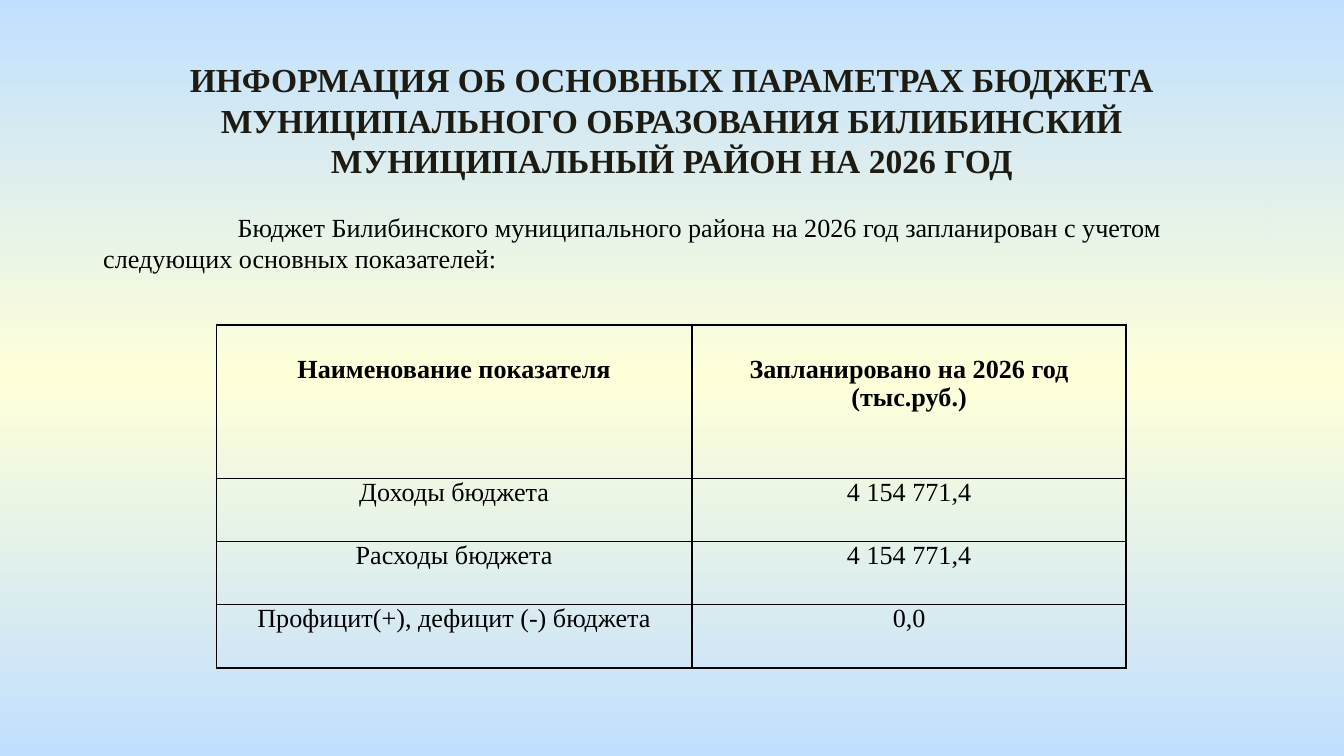
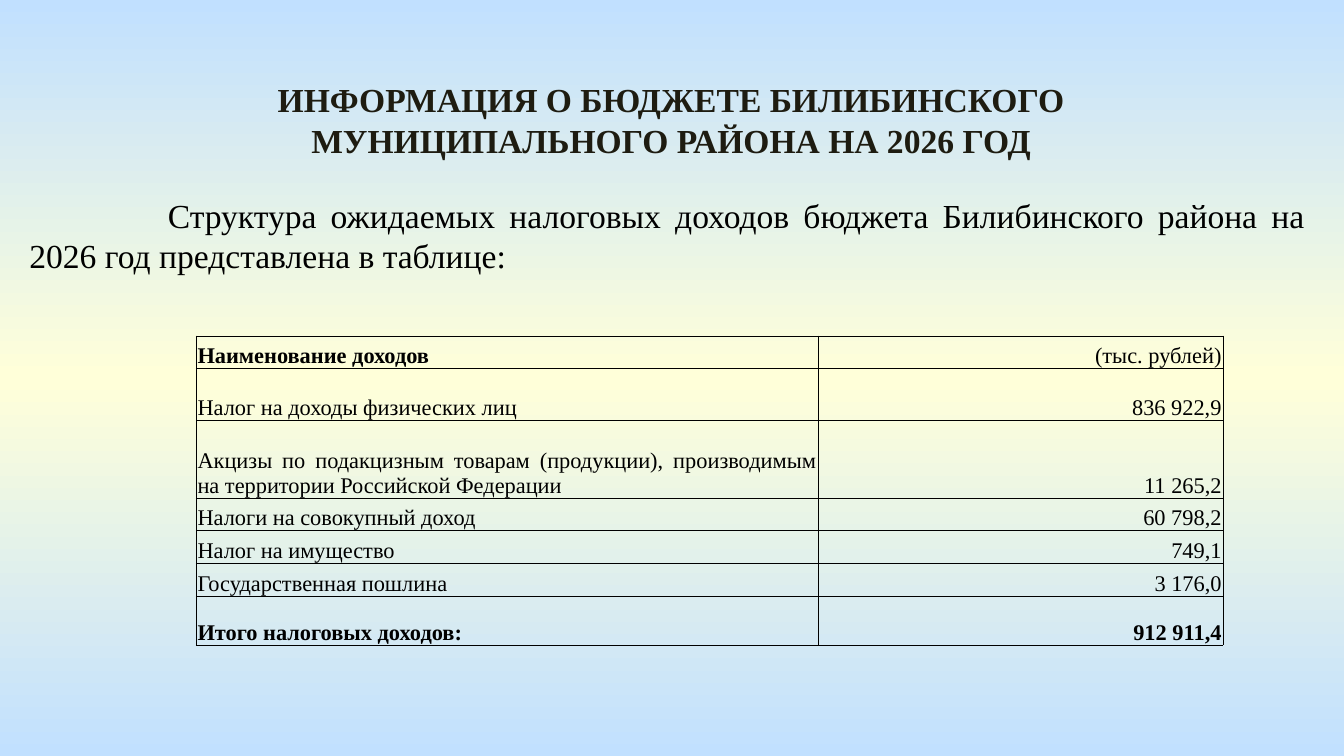
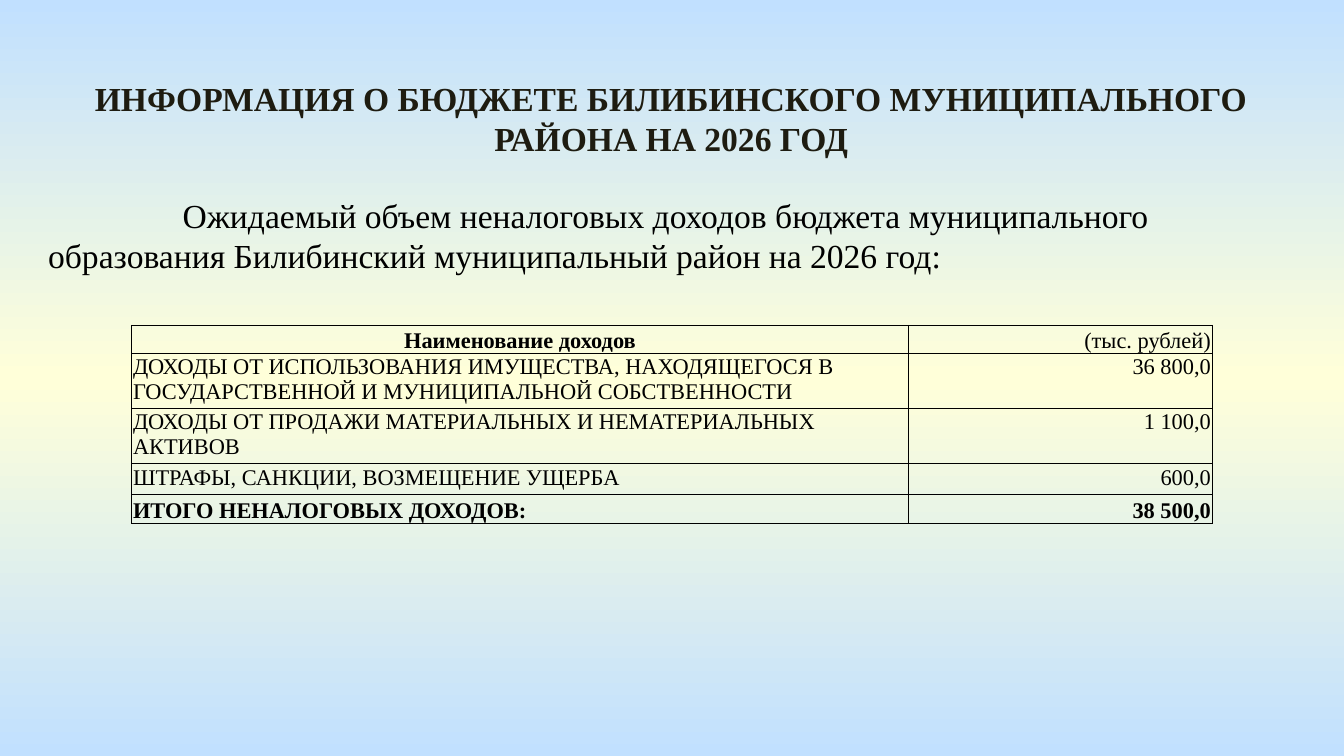
import copy

import pptx
import pptx.dml.color
import pptx.enum.text
import pptx.oxml
import pptx.oxml.ns
import pptx.util
from pptx.util import Inches

FONT = "Times New Roman"
BLACK = "000000"
TITLE_COLOR = "1E1C11"
SKY = "C1E0FF"
CREAM = "FFFFD9"
TITLE_ONLY = 5
INTRO_SIZE = 18
ALIGN = pptx.enum.text.PP_ALIGN
ANCHOR = pptx.enum.text.MSO_ANCHOR
TOTAL_TITLE = "ИНФОРМАЦИЯ О БЮДЖЕТЕ БИЛИБИНСКОГО МУНИЦИПАЛЬНОГО РАЙОНА НА 2026 ГОД"


def rgb(value):
    return pptx.dml.color.RGBColor.from_string(value)


def set_background(master):
    fill = master.background.fill
    fill.gradient()
    fill.gradient_angle = 90
    for stop in fill.gradient_stops:
        stop.color.rgb = rgb(SKY)
    stops = master.element.find(".//" + pptx.oxml.ns.qn("a:gsLst"))
    stops.insert(1, copy.deepcopy(stops[0]))
    for stop, position in zip(fill.gradient_stops, (0, 0.5, 1)):
        stop.position = position
    fill.gradient_stops[1].color.rgb = rgb(CREAM)


def add_run(p, text, size, color=BLACK, bold=False):
    r = p.add_run()
    r.text = text
    r.font.name = FONT
    r.font.size = pptx.util.Pt(size)
    r.font.bold = bold
    r.font.color.rgb = rgb(color)


def place(sp, left, top, width, height):
    sp.left, sp.top = Inches(left), Inches(top)
    sp.width, sp.height = Inches(width), Inches(height)


def add_titled_slide(prs, title, box):
    s = prs.slides.add_slide(prs.slide_layouts[TITLE_ONLY])
    sp = s.shapes.title
    place(sp, *box)
    tf = sp.text_frame
    tf.word_wrap = True
    tf.auto_size = pptx.enum.text.MSO_AUTO_SIZE.NONE
    tf.vertical_anchor = ANCHOR.TOP
    p = tf.paragraphs[0]
    p.alignment = ALIGN.CENTER
    add_run(p, title, 18, TITLE_COLOR, True)
    return s


def add_intro(s, text, box, size=INTRO_SIZE, align=ALIGN.LEFT, indent=1.0):
    sp = s.shapes.add_textbox(*map(Inches, box))
    tf = sp.text_frame
    tf.word_wrap = True
    p = tf.paragraphs[0]
    p.alignment = align
    p._p.get_or_add_pPr().set("indent", str(Inches(indent)))
    add_run(p, text, size)
    return sp


def use_slide_background(sp):
    sp_pr = sp.element.spPr
    sp_pr.remove(sp_pr.find(pptx.oxml.ns.qn("a:noFill")))
    sp.element.set("useBgFill", "1")


def set_borders(cell, width):
    tc_pr = cell._tc.get_or_add_tcPr()
    for side in ("lnL", "lnR", "lnT", "lnB"):
        tc_pr.append(pptx.oxml.parse_xml(
            f'<a:{side} {pptx.oxml.ns.nsdecls("a")} w="{pptx.util.Pt(width)}">'
            f'<a:solidFill><a:srgbClr val="{BLACK}"/></a:solidFill></a:{side}>'))


def add_cell_text(cell, text, size, bold, align, anchor, insets):
    side, top = insets
    cell.margin_left = cell.margin_right = Inches(side)
    cell.margin_top, cell.margin_bottom = Inches(top), 0
    cell.vertical_anchor = anchor
    p = cell.text_frame.paragraphs[0]
    p.alignment = align
    add_run(p, text, size, bold=bold)


def add_grid(s, left, top, widths, heights, rows, size, line, insets,
             aligns, anchors, bold_cells, header_align):
    frame = s.shapes.add_table(
        len(rows), len(widths), Inches(left), Inches(top),
        Inches(sum(widths)), Inches(sum(heights)))
    table = frame.table
    table.first_row = table.horz_banding = False
    for column, width in zip(table.columns, widths):
        column.width = Inches(width)
    for i, (row, height) in enumerate(zip(rows, heights)):
        table.rows[i].height = Inches(height)
        for j, text in enumerate(row):
            cell = table.cell(i, j)
            set_borders(cell, line)
            cell.fill.background()
            align = header_align if (i, j) == (0, 0) else aligns[j]
            add_cell_text(cell, text, size, (i, j) in bold_cells, align,
                          anchors[i], insets)
    return table


def add_parameters_slide(prs):
    s = add_titled_slide(
        prs,
        "ИНФОРМАЦИЯ ОБ ОСНОВНЫХ ПАРАМЕТРАХ БЮДЖЕТА МУНИЦИПАЛЬНОГО "
        "ОБРАЗОВАНИЯ БИЛИБИНСКИЙ МУНИЦИПАЛЬНЫЙ РАЙОН НА 2026 ГОД",
        (0.35, 0.39, 9.3, 1.01))
    sp = add_intro(
        s,
        "Бюджет Билибинского муниципального района на 2026 год запланирован "
        "с учетом следующих основных показателей:",
        (0.67, 1.46, 8.74, 0.64), size=14)
    sp.text_frame.margin_top = Inches(0.11)
    use_slide_background(sp)
    rows = [
        ("Наименование показателя", "Запланировано на 2026 год (тыс.руб.)"),
        ("Доходы бюджета", "4 154 771,4"),
        ("Расходы бюджета", "4 154 771,4"),
        ("Профицит(+), дефицит (-) бюджета", "0,0"),
    ]
    table = add_grid(
        s, 1.61, 2.42, (3.54, 3.23), [1.14] + [0.47] * 3, rows,
        size=14, line=1, insets=(0.07, 0), aligns=(ALIGN.CENTER, ALIGN.CENTER),
        anchors=[ANCHOR.TOP] * 4, bold_cells={(0, 0), (0, 1)},
        header_align=ALIGN.CENTER)
    for cell in table.rows[0].cells:
        cell.margin_top = Inches(0.22)


def add_tax_slide(prs):
    s = add_titled_slide(prs, TOTAL_TITLE, (1.13, 0.54, 7.73, 0.71))
    add_intro(
        s,
        "Структура ожидаемых налоговых доходов бюджета Билибинского района "
        "на 2026 год представлена в таблице:",
        (0.12, 1.4, 9.69, 0.71), align=ALIGN.JUSTIFY, indent=1.03)
    rows = [
        ("Наименование доходов", "(тыс. рублей)"),
        ("Налог на доходы физических лиц", "836 922,9"),
        ("Акцизы по подакцизным товарам (продукции), производимым на "
         "территории Российской Федерации", "11 265,2"),
        ("Налоги на совокупный доход", "60 798,2"),
        ("Налог на имущество", "749,1"),
        ("Государственная пошлина", "3 176,0"),
        ("Итого налоговых доходов:", "912 911,4"),
    ]
    add_grid(
        s, 1.46, 2.5, (4.63, 3.01),
        (0.24, 0.39, 0.58, 0.24, 0.24, 0.25, 0.36), rows,
        size=12, line=0.5, insets=(0.01, 0.01),
        aligns=(ALIGN.JUSTIFY, ALIGN.RIGHT),
        anchors=[ANCHOR.BOTTOM] * 7, bold_cells={(0, 0), (6, 0), (6, 1)},
        header_align=ALIGN.JUSTIFY)


def add_non_tax_slide(prs):
    s = add_titled_slide(prs, TOTAL_TITLE, (0.39, 0.53, 9.21, 0.71))
    add_intro(
        s,
        "Ожидаемый объем неналоговых доходов бюджета муниципального "
        "образования Билибинский муниципальный район на 2026 год:",
        (0.26, 1.4, 9.49, 0.71))
    rows = [
        ("Наименование доходов", "(тыс. рублей)"),
        ("ДОХОДЫ ОТ ИСПОЛЬЗОВАНИЯ ИМУЩЕСТВА, НАХОДЯЩЕГОСЯ В "
         "ГОСУДАРСТВЕННОЙ И МУНИЦИПАЛЬНОЙ СОБСТВЕННОСТИ", "36 800,0"),
        ("ДОХОДЫ ОТ ПРОДАЖИ МАТЕРИАЛЬНЫХ И НЕМАТЕРИАЛЬНЫХ АКТИВОВ",
         "1 100,0"),
        ("ШТРАФЫ, САНКЦИИ, ВОЗМЕЩЕНИЕ УЩЕРБА", "600,0"),
        ("ИТОГО НЕНАЛОГОВЫХ ДОХОДОВ:", "38 500,0"),
    ]
    add_grid(
        s, 0.98, 2.42, (5.78, 2.26), (0.2, 0.41, 0.41, 0.23, 0.2), rows,
        size=12, line=0.5, insets=(0.01, 0.01),
        aligns=(ALIGN.LEFT, ALIGN.RIGHT),
        anchors=[ANCHOR.BOTTOM] + [ANCHOR.TOP] * 3 + [ANCHOR.BOTTOM],
        bold_cells={(0, 0), (4, 0), (4, 1)}, header_align=ALIGN.CENTER)


def main():
    prs = pptx.Presentation()
    prs.slide_width = Inches(10)
    prs.slide_height = prs.slide_width * 9 // 16
    set_background(prs.slide_master)
    add_parameters_slide(prs)
    add_tax_slide(prs)
    add_non_tax_slide(prs)
    prs.save("out.pptx")


if __name__ == "__main__":
    main()
